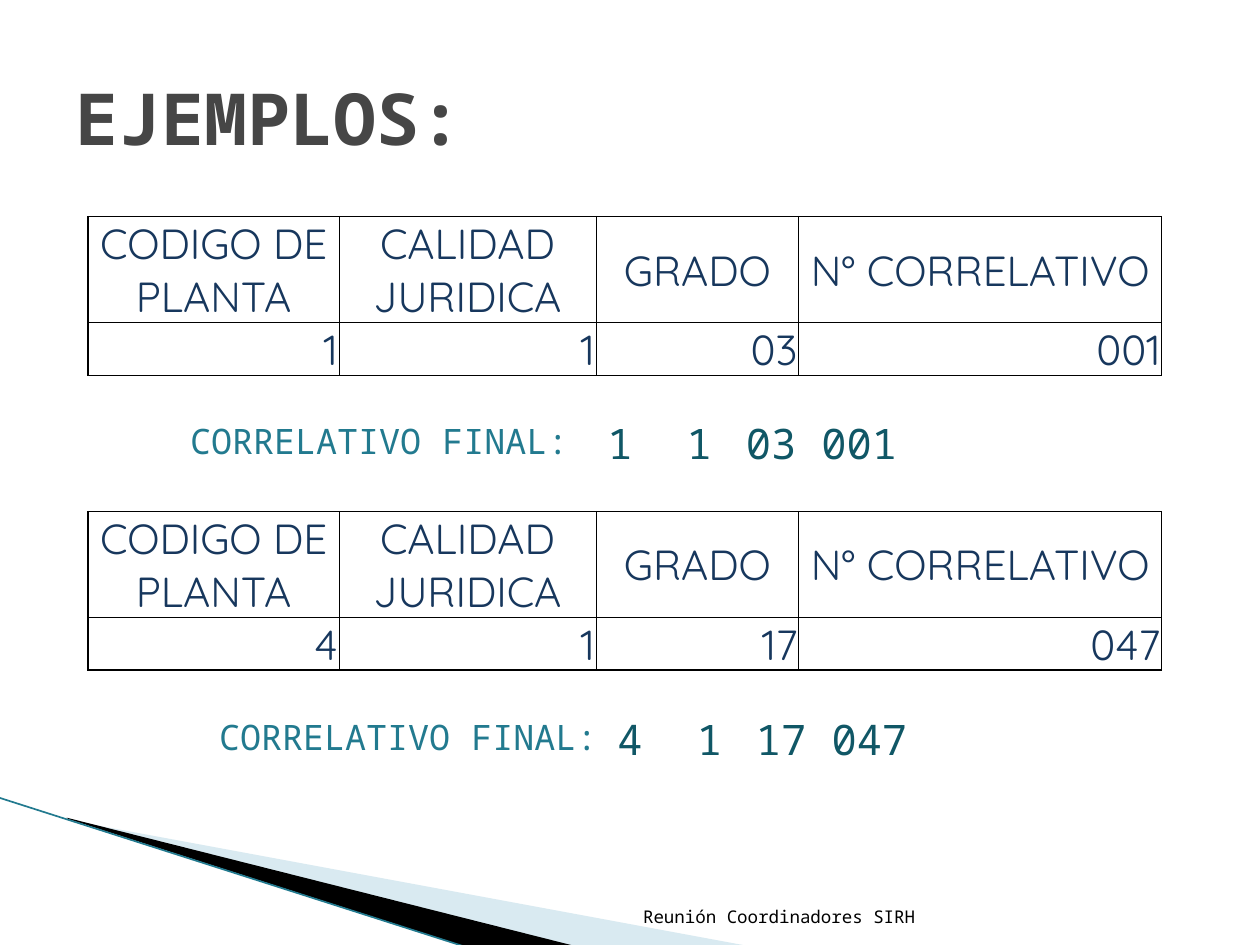
import pptx
import pptx.util
import pptx.dml.color
import pptx.enum.shapes
import pptx.enum.text
import pptx.oxml.ns
from lxml import etree

Inches = pptx.util.Inches
Pt = pptx.util.Pt
RGBColor = pptx.dml.color.RGBColor
ALIGN = pptx.enum.text.PP_ALIGN
ANCHOR = pptx.enum.text.MSO_ANCHOR
qn = pptx.oxml.ns.qn

BLACK = RGBColor(0x00, 0x00, 0x00)
GRAY = RGBColor(0x46, 0x46, 0x46)
NAVY = RGBColor(0x17, 0x37, 0x5D)
TEAL = RGBColor(0x22, 0x7A, 0x8F)
DARK_TEAL = RGBColor(0x10, 0x57, 0x66)
PALE_BLUE = RGBColor(0xA0, 0xCB, 0xDC)

MONO = "Noto Sans Mono"
SANS = "Quicksand"
HEADERS = ["CODIGO DE PLANTA", "CALIDAD JURIDICA", "GRADO", "N° CORRELATIVO"]
CODE_WIDTHS = [1.99, 2.04, 1.61, 2.88]
RESULT_WIDTHS = [0.62, 0.64, 0.5, 0.9]


def style_paragraph(para, font, size, color, align=ALIGN.LEFT, bold=False):
    para.alignment = align
    para.font.name = font
    para.font.size = Pt(size)
    para.font.color.rgb = color
    para.font.bold = bold


def add_text(page, text, left, top, width, height, size, color,
             align=ALIGN.LEFT, anchor=ANCHOR.TOP):
    box = page.shapes.add_textbox(Inches(left), Inches(top), Inches(width), Inches(height))
    frame = box.text_frame
    frame.word_wrap = True
    frame.vertical_anchor = anchor
    frame.text = text
    style_paragraph(frame.paragraphs[0], MONO, size, color, align)


def add_wedge(page, points, color, opacity=100):
    corners = [(Inches(x), Inches(y)) for x, y in points]
    builder = page.shapes.build_freeform(*corners[0])
    builder.add_line_segments(corners[1:], close=True)
    wedge = builder.convert_to_shape()
    wedge.shadow.inherit = False
    wedge.line.fill.background()
    wedge.fill.solid()
    wedge.fill.fore_color.rgb = color
    if opacity < 100:
        fill_color = wedge._element.spPr.find(qn("a:solidFill"))[0]
        etree.SubElement(fill_color, qn("a:alpha"), val=str(opacity * 1000))


def add_edge_line(page, start, end):
    line = page.shapes.add_connector(
        pptx.enum.shapes.MSO_CONNECTOR.STRAIGHT, *map(Inches, start + end))
    line.line.color.rgb = TEAL
    line.line.width = Pt(0.95)
    etree.SubElement(line._element.spPr, qn("a:effectLst"))


def set_borders(cell, widths):
    """Draw black borders; widths are left, right, top, bottom in points."""
    properties = cell._tc.get_or_add_tcPr()
    for index, (side, width) in enumerate(zip("LRTB", widths)):
        border = etree.Element(qn(f"a:ln{side}"), w=str(Pt(width)))
        fill = etree.SubElement(border, qn("a:solidFill"))
        etree.SubElement(fill, qn("a:srgbClr"), val=str(BLACK))
        properties.insert(index, border)


def add_table(page, rows, left, top, widths, heights):
    table = page.shapes.add_table(
        len(rows), len(widths), Inches(left), Inches(top),
        Inches(sum(widths)), Inches(sum(heights))).table
    table.first_row = False
    table.horz_banding = False
    for column, width in zip(table.columns, widths):
        column.width = Inches(width)
    for row, height in zip(table.rows, heights):
        row.height = Inches(height)
    for row, texts in zip(table.rows, rows):
        for cell, text in zip(row.cells, texts):
            cell.text = text
            cell.fill.background()
            cell.margin_left = cell.margin_right = cell.margin_top = Inches(0.01)
            cell.margin_bottom = 0
            cell.vertical_anchor = ANCHOR.BOTTOM
    return table


def add_code_table(page, values, top):
    table = add_table(page, [HEADERS, values], 0.7, top, CODE_WIDTHS, [0.84, 0.42])
    last = len(HEADERS) - 1
    for row_index, row in enumerate(table.rows):
        for index, cell in enumerate(row.cells):
            align = ALIGN.RIGHT if row_index else ALIGN.CENTER
            style_paragraph(cell.text_frame.paragraphs[0], SANS, 24, NAVY, align)
            if row_index == 0:
                cell.vertical_anchor = ANCHOR.MIDDLE
            set_borders(cell, [1 if index == 0 else 0.5,
                               1 if index == last else 0.5, 1, 1])


def add_result(page, values, label_left, table_left, top):
    table = add_table(page, [values], table_left, top, RESULT_WIDTHS, [0.41])
    for cell in table.rows[0].cells:
        style_paragraph(cell.text_frame.paragraphs[0], MONO, 24, DARK_TEAL, ALIGN.CENTER)
    add_text(page, "CORRELATIVO FINAL:", label_left, top, 3.59, 0.44, 20, TEAL)


def add_title(page, text):
    title = page.shapes.title
    title.left, title.top = Inches(0.5), Inches(0.3)
    title.width, title.height = Inches(9), Inches(1.25)
    title.text_frame.text = text
    title.text_frame.vertical_anchor = ANCHOR.MIDDLE
    style_paragraph(title.text_frame.paragraphs[0], MONO, 41, GRAY, bold=True)


def main():
    deck = pptx.Presentation()
    deck.slide_width, deck.slide_height = Inches(10), Inches(7.5)
    page = deck.slides.add_slide(deck.slide_layouts[5])

    # Corner decoration
    add_wedge(page, [(0.55, 6.51), (5.95, 7.51), (4.56, 7.51), (0.55, 6.5)], PALE_BLUE, 40)
    add_wedge(page, [(0.53, 6.49), (4.57, 7.51), (3.72, 7.52), (0.54, 6.5)], BLACK)
    add_edge_line(page, (-0.01, 6.33), (3.71, 7.52))

    # Footer and title
    add_text(page, "Reunión Coordinadores SIRH", 4.79, 7.01, 2.57, 0.4, 10, BLACK,
             ALIGN.RIGHT, ANCHOR.BOTTOM)
    add_title(page, "EJEMPLOS:")

    # Each example: code parts, then the final number
    examples = [
        (["1", "1", "03", "001"], 1.72, 1.41, 4.61, 3.28),
        (["4", "1", "17", "047"], 4.06, 1.64, 4.69, 5.63),
    ]
    for values, code_top, label_left, result_left, result_top in examples:
        add_code_table(page, values, code_top)
        add_result(page, values, label_left, result_left, result_top)

    deck.save("out.pptx")


if __name__ == "__main__":
    main()
